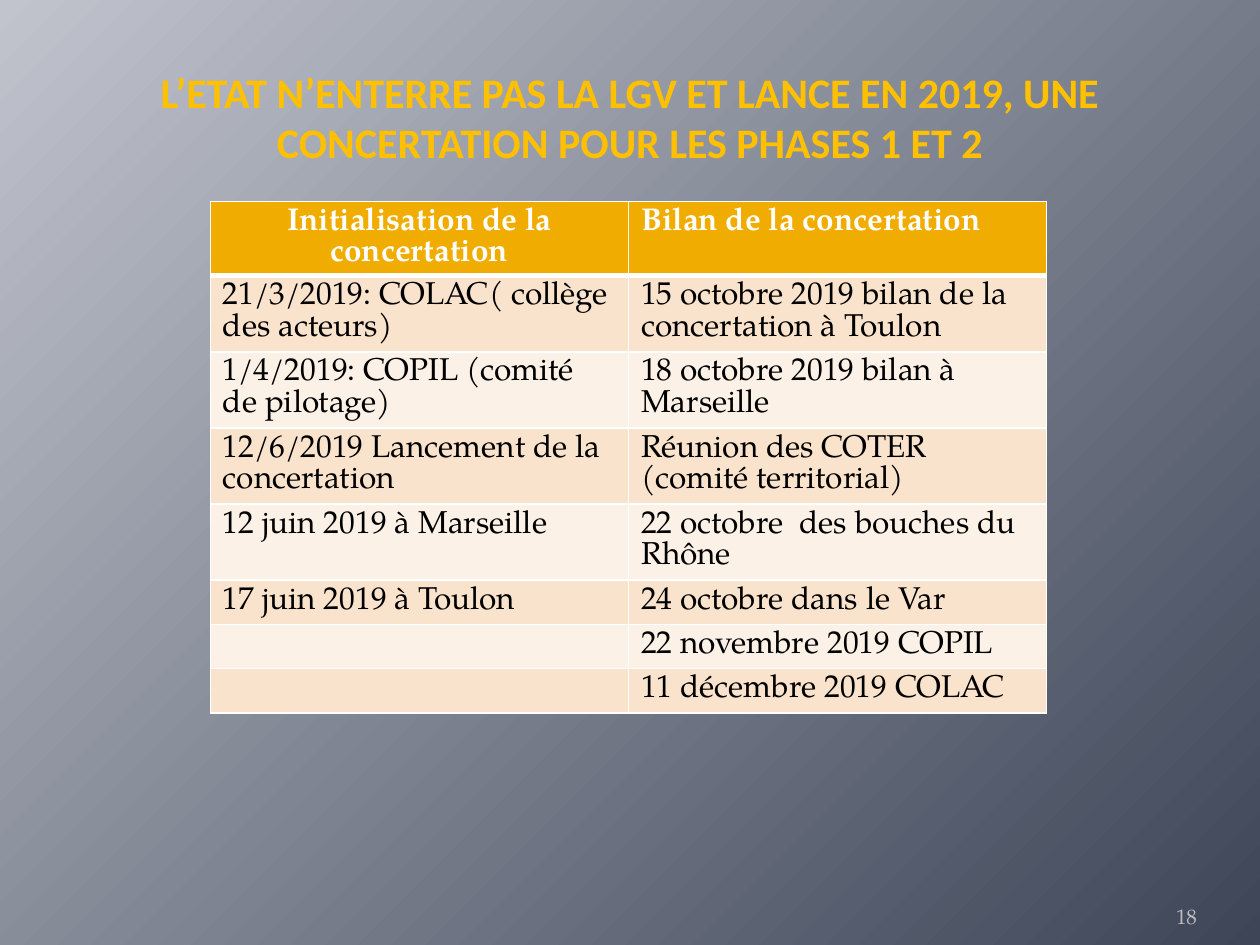
from dataclasses import dataclass

from lxml.etree import SubElement as Sub
from pptx import Presentation as Deck
from pptx.dml.color import RGBColor as Rgb
from pptx.enum.text import MSO_ANCHOR as Anchor, PP_ALIGN as Align
from pptx.oxml.ns import qn
from pptx.util import Cm, Pt

HUES = {
    "light": "C1C4CD", "dark": "3D4557", "title": "FFC000", "head": "F0AD00",
    "odd": "F9E3CC", "even": "FCF1E7", "white": "FFFFFF", "black": "000000",
    "page": "BDBDBD",
}
SERIF = "TeX Gyre Pagella"


@dataclass
class Row:
    """One table row: its two texts and its look."""
    left: str
    right: str
    fill: str
    ink: str = "black"
    bold: bool = False
    base: int = 1


HEAD = Row("Initialisation de la concertation", "Bilan de la concertation",
           "head", "white", True, 3)
PAIRS = [
    ("21/3/2019: COLAC( collège des acteurs)",
     "15 octobre 2019 bilan de la concertation à Toulon"),
    ("1/4/2019: COPIL (comité de pilotage)", "18 octobre 2019 bilan à Marseille"),
    ("12/6/2019 Lancement de la concertation",
     "Réunion des COTER (comité territorial)"),
    ("12 juin 2019 à Marseille", "22 octobre  des bouches du Rhône"),
    ("17 juin 2019 à Toulon", "24 octobre dans le Var"),
    ("", "22 novembre 2019 COPIL"),
    ("", "11 décembre 2019 COLAC"),
]


def hue(name: str) -> Rgb:
    """Look up a colour."""
    return Rgb.from_string(HUES[name])


def write(frame, text: str, *, size: int = 18, font: str = SERIF,
          ink: str = "black", bold: bool = False, align=Align.LEFT) -> None:
    """Put formatted text in a frame."""
    frame.word_wrap = True
    para = frame.paragraphs[0]
    para.alignment = align
    if text:
        face = para.add_run().font
    else:
        face = para.font
    face.size, face.name, face.bold = Pt(size), font, bold
    face.color.rgb = hue(ink)
    if text:
        para.runs[0].text = text


def edge(cell, base: int) -> None:
    """Draw white borders around a cell."""
    props = cell._tc.get_or_add_tcPr()
    for spot, (side, width) in enumerate(
            {"lnL": 1, "lnR": 1, "lnT": 1, "lnB": base}.items()):
        line = Sub(props, qn(f"a:{side}"), w=str(Pt(width)))
        Sub(Sub(line, qn("a:solidFill")), qn("a:srgbClr"), val=HUES["white"])
        props.insert(spot, line)


def paint(slide) -> None:
    """Spread a gradient from the top left corner."""
    fill = slide.background.fill
    fill.gradient()
    for stop, name in zip(fill.gradient_stops, ("light", "dark")):
        stop.color.rgb = hue(name)
    grad = slide.element.find(".//" + qn("a:gradFill"))
    grad.remove(grad.find(qn("a:lin")))
    way = Sub(grad, qn("a:path"), path="circle")
    Sub(way, qn("a:fillToRect"), r="100000", b="100000")


def chart(slide, rows: list[Row]) -> None:
    """Draw the table of dates."""
    grid = slide.shapes.add_table(len(rows), 2, Cm(4.24), Cm(4.06),
                                  Cm(16.86), Cm(0.81) * len(rows)).table
    for num, row in enumerate(rows):
        for col, text in enumerate((row.left, row.right)):
            cell = grid.cell(num, col)
            cell.fill.solid()
            cell.fill.fore_color.rgb = hue(row.fill)
            mid = row is HEAD and col == 0
            write(cell.text_frame, text, ink=row.ink, bold=row.bold,
                  align=Align.CENTER if mid else Align.LEFT)
            edge(cell, row.base)


def main() -> None:
    """Build the slide."""
    deck = Deck()
    deck.slide_width, deck.slide_height = Cm(25.4), Cm(19.05)
    slide = deck.slides.add_slide(deck.slide_layouts[5])
    paint(slide)

    title = slide.shapes.title
    title.left, title.top = Cm(1.27), Cm(0.76)
    title.width, title.height = Cm(22.86), Cm(3.18)
    title.text_frame.vertical_anchor = Anchor.MIDDLE
    write(title.text_frame,
          "L’ETAT N’ENTERRE PAS LA LGV ET LANCE EN 2019, UNE "
          "CONCERTATION POUR LES PHASES 1 ET 2",
          size=24, font="Calibri", ink="title", bold=True, align=Align.CENTER)

    chart(slide, [HEAD] + [Row(*pair, ("odd", "even")[num % 2])
                           for num, pair in enumerate(PAIRS)])

    page = slide.shapes.add_textbox(Cm(22.02), Cm(17.83), Cm(2.11), Cm(1.02))
    frame = page.text_frame
    frame.margin_left = frame.margin_right = 0
    frame.vertical_anchor = Anchor.BOTTOM
    write(frame, "18", size=12, ink="page", align=Align.RIGHT)

    deck.save("out.pptx")


if __name__ == "__main__":
    main()
